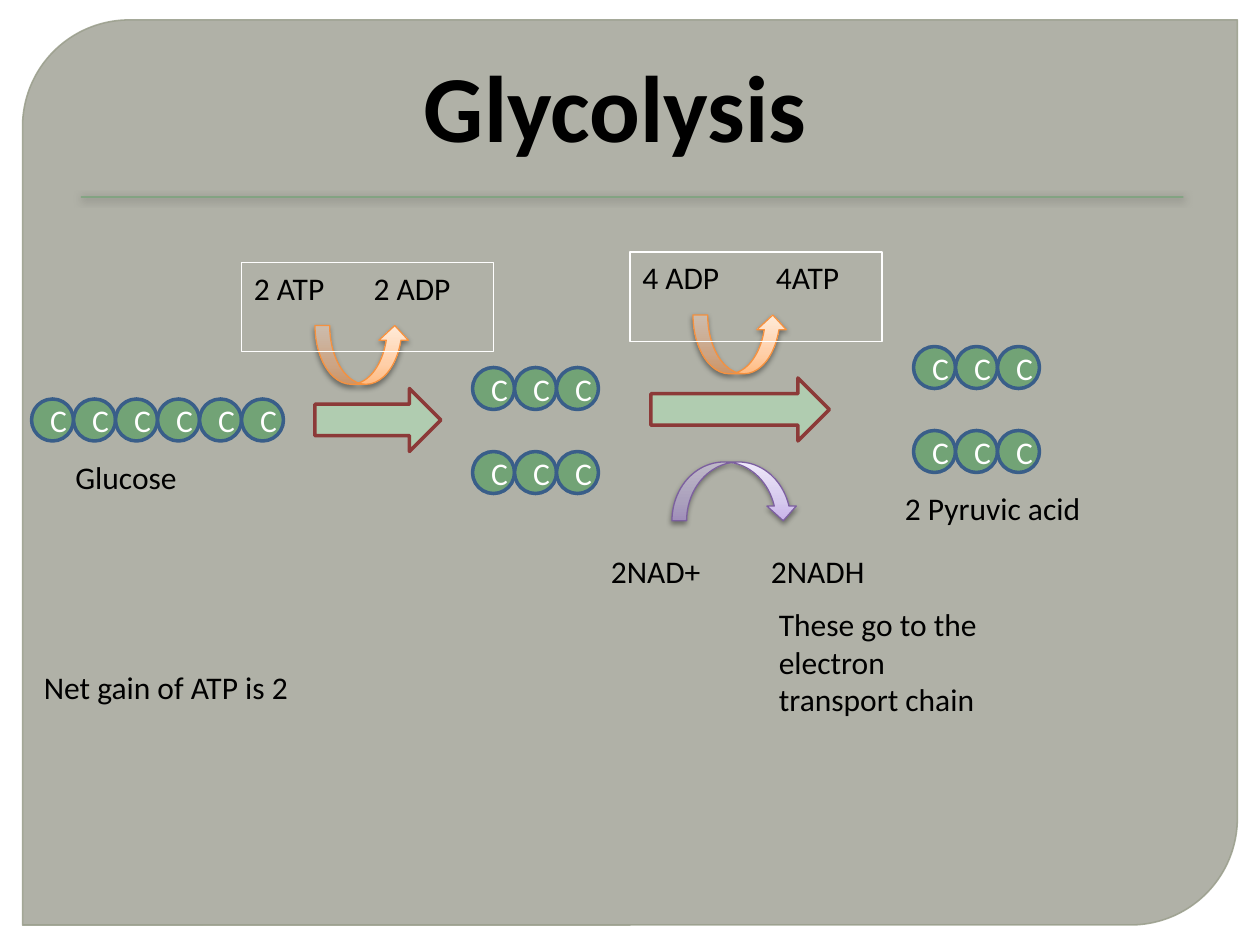
from pptx import Presentation
from pptx.dml.color import RGBColor
from pptx.enum.shapes import MSO_SHAPE
from pptx.enum.text import MSO_ANCHOR, MSO_AUTO_SIZE, PP_ALIGN
from pptx.oxml import parse_xml
from pptx.oxml.ns import nsdecls, qn
from pptx.util import Inches, Pt

CIRCLE = MSO_SHAPE.OVAL
RECTANGLE = MSO_SHAPE.RECTANGLE
PANEL = MSO_SHAPE.ROUND_2_DIAG_RECTANGLE
RIGHT_ARROW = MSO_SHAPE.RIGHT_ARROW
CURVED_UP = MSO_SHAPE.CURVED_UP_ARROW
CURVED_DOWN = MSO_SHAPE.CURVED_DOWN_ARROW
LEFT, CENTER = PP_ALIGN.LEFT, PP_ALIGN.CENTER

BLACK = RGBColor(0x00, 0x00, 0x00)
WHITE = RGBColor(0xFF, 0xFF, 0xFF)
PANEL_GRAY = RGBColor(0x87, 0x88, 0x78)
PANEL_EDGE = RGBColor(0x9B, 0x9F, 0x8D)
GREEN = RGBColor(0x72, 0xA3, 0x76)
PALE_GREEN = RGBColor(0xB0, 0xCC, 0xB0)
BLUE = RGBColor(0x39, 0x5E, 0x89)
RED = RGBColor(0x8C, 0x3A, 0x38)
ORANGE = RGBColor(0xF5, 0x91, 0x3F)
PURPLE = RGBColor(0x7C, 0x5F, 0x9F)
ORANGE_STOPS = [(0, "FFBB82"), (35, "FFCFA8"), (100, "FFEBD9")]
PURPLE_STOPS = [(0, "C8B2E9"), (35, "D6CAED"), (100, "EFE8FA")]

FONT = "Calibri"
COLUMNS, ROWS = 120, 90
CELL = Inches(10) / COLUMNS
ATOM = 4
ONE_LINE, BOX_HEIGHT, BEND = 4.8, 8.5, 5.6

CARBON_CHAINS = [(3, 38, 6), (45, 35, 3), (45, 43, 3), (87, 33, 3), (87, 41, 3)]
STEP_ARROWS = [(30, 37, 12, 6), (62, 36, 17, 6)]
EXCHANGE_ARROWS = [
    (CURVED_UP, (30, 31, 9, BEND), ORANGE_STOPS, ORANGE),
    (CURVED_UP, (66, 30, 9, BEND), ORANGE_STOPS, ORANGE),
    (CURVED_DOWN, (64, 44, 12, BEND), PURPLE_STOPS, PURPLE),
]
EXCHANGE_LABELS = [
    ("2 ATP", "2 ADP", (23, 25, 24, BOX_HEIGHT), 0.95, True),
    ("4 ADP", "4ATP", (60, 24, 24, BOX_HEIGHT), 1.06, True),
    ("2NAD+", "2NADH", (57, 52, 27, BOX_HEIGHT), 1.27, False),
]
LABELS = [
    ("These go to the electron transport chain", (73, 57, 24, 12.1)),
    ("2 Pyruvic acid", (85, 46, 23, ONE_LINE)),
    ("Glucose", (6, 43, 21, ONE_LINE)),
    ("Net gain of ATP is 2", (3, 63, 37, ONE_LINE)),
]


def place(area):
    return [round(value * CELL) for value in area]


def set_alpha(fill, percent):
    color = fill.find(".//" + qn("a:srgbClr"))
    color.append(parse_xml(f'<a:alpha {nsdecls("a")} val="{percent * 1000}"/>'))


def add_shape(slide, kind, area, fill, line=None, width=0.75):
    shape = slide.shapes.add_shape(kind, *place(area))
    shape.shadow.inherit = False
    shape.fill.solid()
    shape.fill.fore_color.rgb = fill
    if line is None:
        shape.line.fill.background()
    else:
        shape.line.color.rgb = line
        shape.line.width = Pt(width)
    return shape


def add_shadow(shape, blur, distance, percent):
    effects = shape.element.spPr.find(qn("a:effectLst"))
    effects.append(parse_xml(
        f'<a:outerShdw {nsdecls("a")} blurRad="{Pt(blur)}" dist="{Pt(distance)}" '
        f'dir="5400000" rotWithShape="0"><a:srgbClr val="000000">'
        f'<a:alpha val="{percent * 1000}"/></a:srgbClr></a:outerShdw>'))


def set_gradient(shape, stops):
    properties = shape.element.spPr
    stop_list = "".join(
        f'<a:gs pos="{position * 1000}"><a:srgbClr val="{color}"/></a:gs>'
        for position, color in stops)
    properties.replace(properties.find(qn("a:solidFill")), parse_xml(
        f'<a:gradFill {nsdecls("a")} rotWithShape="1"><a:gsLst>{stop_list}</a:gsLst>'
        f'<a:lin ang="16200000" scaled="1"/></a:gradFill>'))


def write(paragraph, text, color=BLACK, size=18, bold=False, align=LEFT):
    paragraph.alignment = align
    run = paragraph.add_run()
    run.text = text
    run.font.name = FONT
    run.font.size = Pt(size)
    run.font.bold = bold
    run.font.color.rgb = color


def add_text_box(slide, area):
    box = slide.shapes.add_textbox(*place(area))
    box.text_frame.word_wrap = True
    box.text_frame.auto_size = MSO_AUTO_SIZE.NONE
    return box


def add_tab_stop(paragraph, inches):
    paragraph._p.get_or_add_pPr().append(parse_xml(
        f'<a:tabLst {nsdecls("a")}><a:tab pos="{Inches(inches)}" algn="l"/></a:tabLst>'))


def main():
    presentation = Presentation()
    presentation.slide_width = round(COLUMNS * CELL)
    presentation.slide_height = round(ROWS * CELL)
    slide = presentation.slides.add_slide(presentation.slide_layouts[6])

    panel = add_shape(slide, PANEL, (2.15, 1.9, 115.7, 86.2), PANEL_GRAY, PANEL_EDGE, 0.87)
    panel.adjustments[0] = 0.118
    panel.adjustments[1] = 0
    set_alpha(panel.element.spPr.find(qn("a:solidFill")), 65)
    set_alpha(panel.element.spPr.find(qn("a:ln")), 88)

    divider = add_shape(slide, RECTANGLE, (7.7, 18.7, 105, 0.12), GREEN)
    add_shadow(divider, 5, 1, 75)

    for left, top, count in CARBON_CHAINS:
        for index in range(count):
            area = (left + index * ATOM, top, ATOM, ATOM)
            carbon = add_shape(slide, CIRCLE, area, GREEN, BLUE, 2)
            carbon.text_frame.vertical_anchor = MSO_ANCHOR.MIDDLE
            write(carbon.text_frame.paragraphs[0], "C", WHITE, align=CENTER)

    for area in STEP_ARROWS:
        add_shape(slide, RIGHT_ARROW, area, PALE_GREEN, RED, 2)

    for kind, area, stops, edge in EXCHANGE_ARROWS:
        arrow = add_shape(slide, kind, area, edge, edge)
        set_gradient(arrow, stops)
        add_shadow(arrow, 3.1, 1.6, 38)

    for before, after, area, tab, framed in EXCHANGE_LABELS:
        box = add_text_box(slide, area)
        if framed:
            box.line.color.rgb = WHITE
            box.line.width = Pt(0.75)
        paragraph = box.text_frame.paragraphs[0]
        add_tab_stop(paragraph, tab)
        write(paragraph, f"{before}\t{after}")

    for text, area in LABELS:
        write(add_text_box(slide, area).text_frame.paragraphs[0], text)

    title = add_text_box(slide, (39, 4, 39.2, 12.1))
    write(title.text_frame.paragraphs[0], "Glycolysis", size=54, bold=True, align=CENTER)

    presentation.save("out.pptx")


if __name__ == "__main__":
    main()
